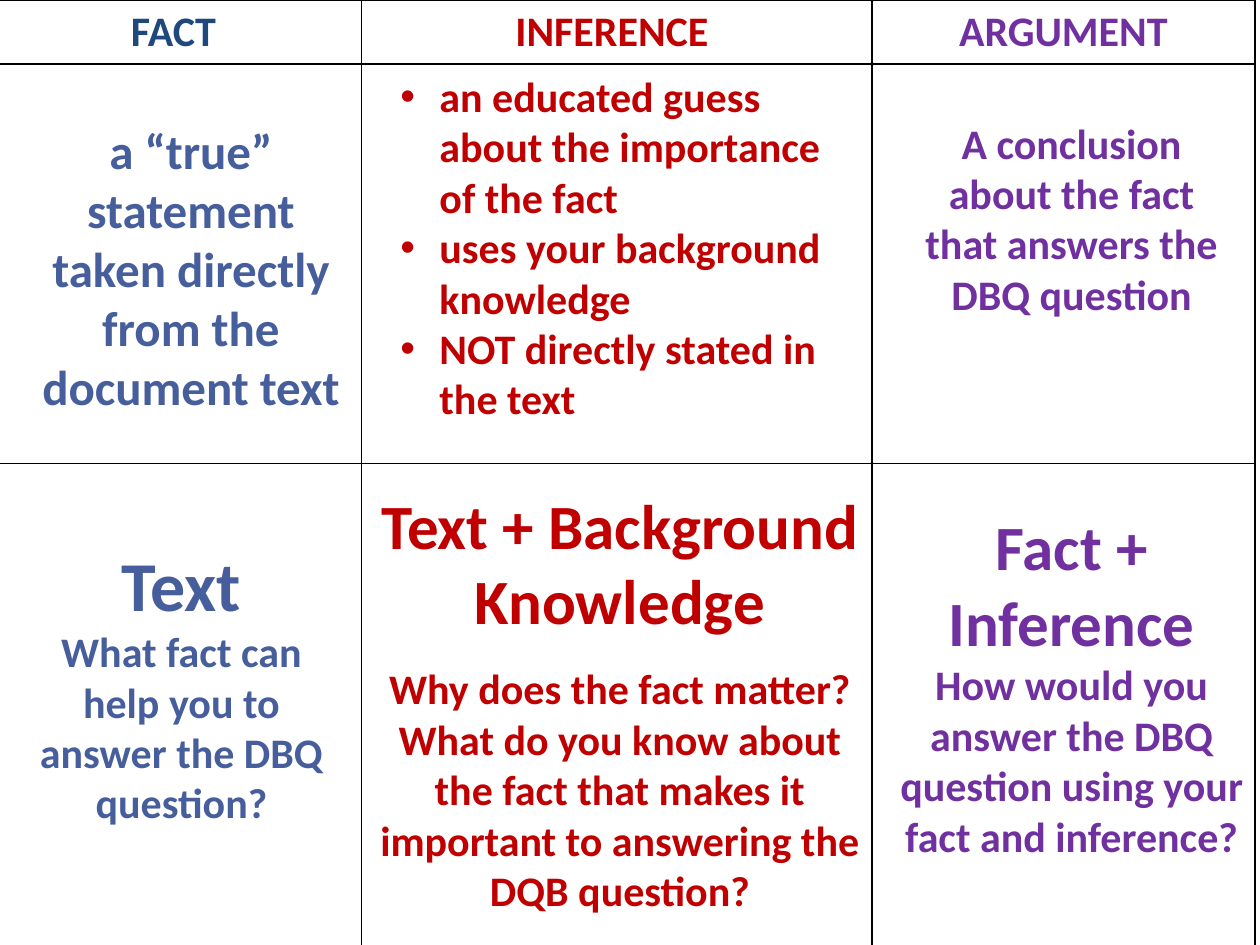
from lxml import etree
from pptx import Presentation
from pptx.dml.color import RGBColor
from pptx.enum.text import MSO_AUTO_SIZE, PP_ALIGN
from pptx.oxml.ns import qn
from pptx.util import Inches, Pt

CENTER = PP_ALIGN.CENTER
LEFT = PP_ALIGN.LEFT
FIT_SHAPE = MSO_AUTO_SIZE.SHAPE_TO_FIT_TEXT
BLANK_LAYOUT = 6

FONT = "Calibri"
NAVY, BLUE, RED, PURPLE = "1F497D", "465E9C", "C00000", "7030A0"
COLUMN_WIDTHS = (2.91, 4.05, 3.04)
ROW_HEIGHTS = (0.5, 3.17, 3.92)
HEADINGS = (("FACT ", NAVY), ("INFERENCE ", RED), ("ARGUMENT", PURPLE))

DEFINITIONS = (
    ((0.21, 0.91, 2.61, 2.46), BLUE,
     [("a “true” statement taken directly from the document text", 28)]),
    ((7.17, 0.88, 2.67, 1.72), PURPLE,
     [("A conclusion about the fact that answers the DBQ question", 24)]),
)
INFERENCE_POINTS = (
    "an educated guess about the importance of the fact",
    "uses your background knowledge",
    "NOT directly stated in the text",
)
FORMULAS = (
    ((0.19, 4.25, 2.5, 2.39), BLUE, 0,
     [("Text", 40),
      ("What fact can help you to answer the DBQ question?", 24)]),
    ((2.92, 3.81, 4, 3.53), RED, 14.5,
     [("Text + Background Knowledge", 36),
      ("Why does the fact matter? What do you know about the fact that makes "
       "it important to answering the DQB question?", 24)]),
    ((6.92, 3.98, 3.17, 2.93), PURPLE, 0,
     [("Fact + Inference", 36),
      ("How would you answer the DBQ question using your fact and inference?",
       24)]),
)


def rgb(hex_color):
    """Turn a hex string into a colour."""
    return RGBColor.from_string(hex_color)


def format_paragraph(paragraph, text, size, color, align=CENTER):
    """Fill a paragraph with bold coloured text."""
    paragraph.text = text
    paragraph.alignment = align
    font = paragraph.font
    font.name, font.size, font.bold = FONT, Pt(size), True
    font.color.rgb = rgb(color)


def set_borders(cell, color="000000", width=1):
    """Draw a solid line on every side of a cell."""
    properties = cell._tc.get_or_add_tcPr()
    for position, side in enumerate(("a:lnL", "a:lnR", "a:lnT", "a:lnB")):
        line = etree.Element(qn(side), w=str(Pt(width)))
        fill = etree.SubElement(line, qn("a:solidFill"))
        etree.SubElement(fill, qn("a:srgbClr"), val=color)
        properties.insert(position, line)


def add_grid(slide):
    """Add the ruled table with its coloured headings."""
    table = slide.shapes.add_table(
        len(ROW_HEIGHTS), len(COLUMN_WIDTHS), Inches(-0.04), 0,
        Inches(sum(COLUMN_WIDTHS)), Inches(sum(ROW_HEIGHTS))).table
    for column, width in zip(table.columns, COLUMN_WIDTHS):
        column.width = Inches(width)
    for row, height in zip(table.rows, ROW_HEIGHTS):
        row.height = Inches(height)
    for cell in table.iter_cells():
        cell.fill.background()
        set_borders(cell)
    for cell, (heading, color) in zip(table.rows[0].cells, HEADINGS):
        format_paragraph(cell.text_frame.paragraphs[0], heading, 24, color)


def add_text(slide, box, color, lines, gap=0, align=CENTER):
    """Add a wrapped text box and return its paragraphs."""
    frame = slide.shapes.add_textbox(*map(Inches, box)).text_frame
    frame.word_wrap = True
    frame.auto_size = FIT_SHAPE
    for index, (text, size) in enumerate(lines):
        paragraph = frame.add_paragraph() if index else frame.paragraphs[0]
        format_paragraph(paragraph, text, size, color, align)
        if index and gap:
            paragraph.space_before = Pt(gap)
    return frame.paragraphs


def add_bullet(paragraph, indent=0.31):
    """Give a paragraph a hanging round bullet."""
    properties = paragraph._p.get_or_add_pPr()
    properties.set("marL", str(Inches(indent)))
    properties.set("indent", str(-Inches(indent)))
    bullet_font = etree.Element(qn("a:buFont"), typeface="Arial")
    bullet = etree.Element(qn("a:buChar"), char="•")
    properties.insert_element_before(bullet_font, "a:defRPr")
    properties.insert_element_before(bullet, "a:defRPr")


def main():
    """Build the fact, inference and argument slide."""
    presentation = Presentation()
    presentation.slide_width = Inches(10)
    presentation.slide_height = Inches(7.5)
    slide = presentation.slides.add_slide(
        presentation.slide_layouts[BLANK_LAYOUT])
    add_grid(slide)
    for box, color, lines in DEFINITIONS:
        add_text(slide, box, color, lines)
    points = add_text(slide, (3.08, 0.51, 3.74, 2.93), RED,
                      [(point, 24) for point in INFERENCE_POINTS], align=LEFT)
    for point in points:
        add_bullet(point)
    for box, color, gap, lines in FORMULAS:
        add_text(slide, box, color, lines, gap)
    presentation.save("out.pptx")


if __name__ == "__main__":
    main()
